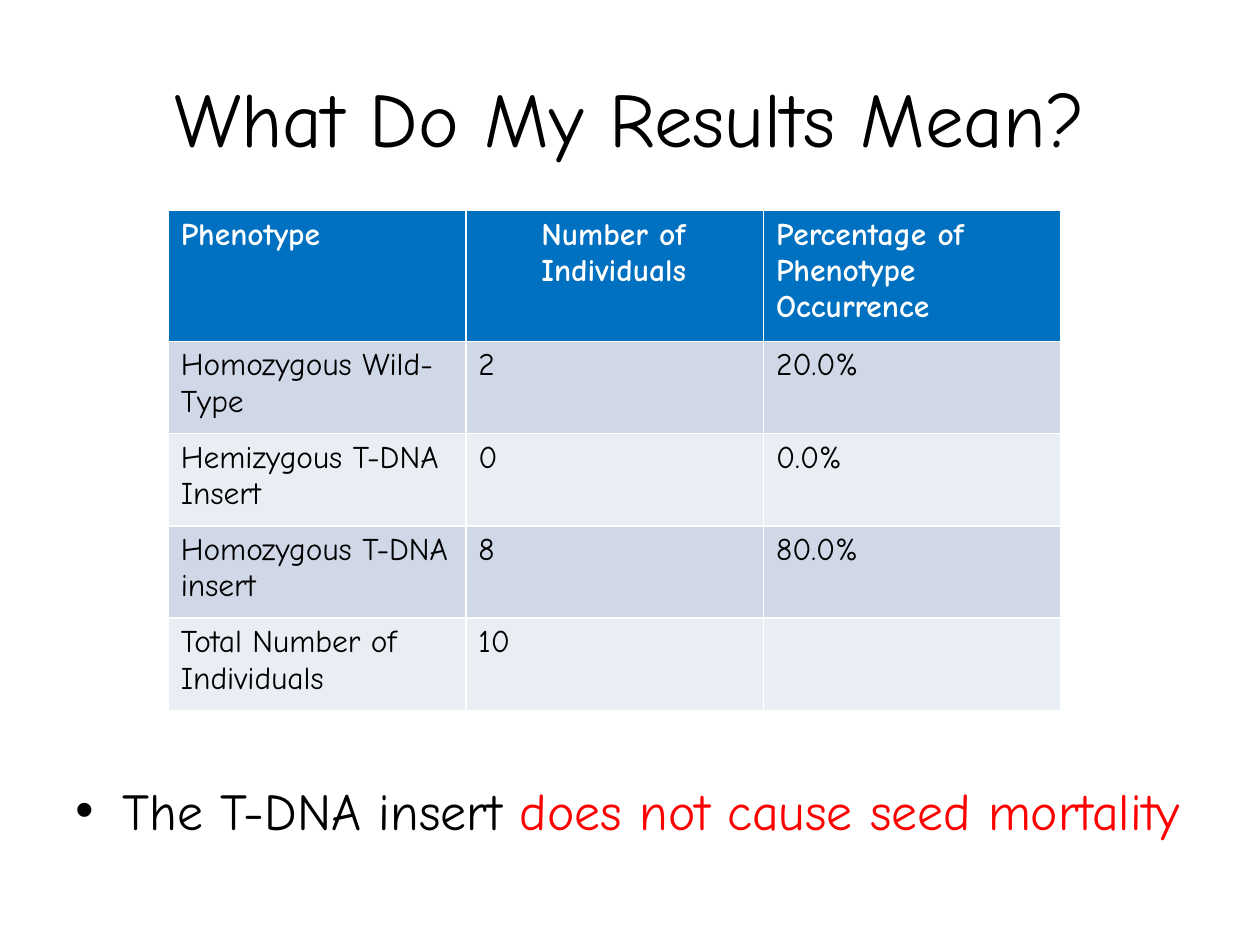
from lxml import etree
from pptx import Presentation
from pptx.dml.color import RGBColor
from pptx.enum.text import MSO_ANCHOR, PP_ALIGN
from pptx.oxml.ns import qn
from pptx.util import Cm, Pt

CENTER = PP_ALIGN.CENTER
MIDDLE = MSO_ANCHOR.MIDDLE
FONT = "Comic Neue"
BLACK, WHITE, RED = "000000", "FFFFFF", "FF0000"
HEADER_FILL = "0070C0"
BAND_FILLS = ["E9EDF4", "D0D8E8"]


def rgb(hex_color):
    return RGBColor.from_string(hex_color)


def add_text(paragraph, text, color, **font_format):
    run = paragraph.add_run()
    run.text = text
    run.font.color.rgb = rgb(color)
    for attribute, value in {"name": FONT, **font_format}.items():
        setattr(run.font, attribute, value)


prs = Presentation()
prs.slide_width, prs.slide_height = Cm(25.4), Cm(19.05)
slide = prs.slides.add_slide(prs.slide_layouts[6])

# Title
title = slide.shapes.add_textbox(Cm(1.27), Cm(0.76), Cm(22.86), Cm(3.18)).text_frame
title.word_wrap = True
title.vertical_anchor = MIDDLE
title.paragraphs[0].alignment = CENTER
add_text(title.paragraphs[0], "What Do My Results Mean?", BLACK, size=Pt(44))

# Phenotype counts
results = [
    ["Phenotype", "Number of Individuals", "Percentage of Phenotype Occurrence"],
    ["Homozygous Wild-Type", "2", "20.0%"],
    ["Hemizygous T-DNA Insert", "0", "0.0%"],
    ["Homozygous T-DNA insert", "8", "80.0%"],
    ["Total Number of Individuals", "10", ""],
]
table = slide.shapes.add_table(
    len(results), len(results[0]), Cm(3.39), Cm(4.24), Cm(18), Cm(10.08)
).table
for row_index, row in enumerate(results):
    is_header = row_index == 0
    table.rows[row_index].height = Cm(2.64 if is_header else 1.86)
    for column_index, text in enumerate(row):
        cell = table.cell(row_index, column_index)
        cell.fill.solid()
        cell.fill.fore_color.rgb = rgb(HEADER_FILL if is_header else BAND_FILLS[row_index % 2])
        if text:
            add_text(cell.text_frame.paragraphs[0], text, WHITE if is_header else BLACK,
                     size=Pt(18), bold=is_header)
count_heading = table.cell(0, 1).text_frame.paragraphs[0]
count_heading.level = 1
count_heading._p.get_or_add_pPr().set("marL", str(Cm(1.27)))

# Conclusion
conclusion = slide.shapes.add_textbox(Cm(1.27), Cm(15.57), Cm(22.86), Cm(2.41)).text_frame
conclusion.word_wrap = True
finding = conclusion.paragraphs[0]
finding.space_before = Pt(6)
bullet_format = finding._p.get_or_add_pPr()
bullet_format.set("marL", str(Cm(0.95)))
bullet_format.set("indent", str(Cm(-0.95)))
etree.SubElement(bullet_format, qn("a:buFont")).set("typeface", "Arial")
etree.SubElement(bullet_format, qn("a:buChar")).set("char", "•")
add_text(finding, "The T-DNA insert ", BLACK, size=Pt(29.6))
add_text(finding, "does not cause seed mortality", RED, size=Pt(29.6))

prs.save("out.pptx")
